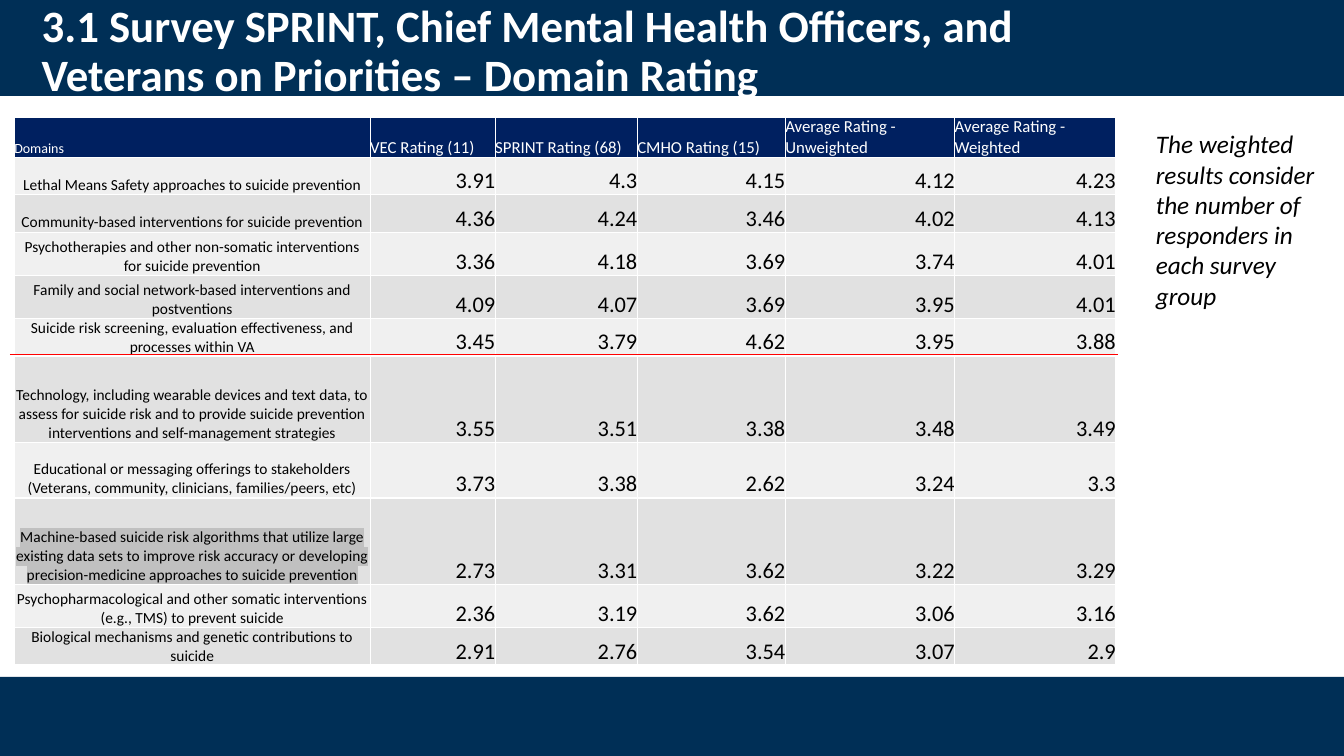
from dataclasses import dataclass

from lxml import etree
from pptx import Presentation, util as u
from pptx.dml import color as col
from pptx.enum import shapes, text
from pptx.oxml import ns


@dataclass(frozen=True)
class Theme:
    """Colours, type sizes and font of the slide."""
    font: str = "Calibri"
    band: str = "002F56"
    head: str = "002060"
    odd: str = "F0F0F0"
    even: str = "E1E1E1"
    mark: str = "C0C0C0"
    rule: str = "FF0000"
    white: str = "FFFFFF"
    black: str = "000000"
    title: int = 32
    note: int = 18
    value: int = 16
    label: int = 12
    domain: int = 11
    small: int = 10


T = Theme()
ALIGN = text.PP_ALIGN
TITLE = ("3.1 Survey SPRINT, Chief Mental Health Officers, and "
         "Veterans on Priorities – Domain Rating")
NOTE = "The weighted results consider the number of responders in each survey group"
HEADS = ["Domains", "VEC Rating (11)", "SPRINT Rating (68)", "CMHO Rating (15)",
         "Average Rating - Unweighted", "Average Rating - Weighted"]
WIDTHS = [8.97, 3.15, 3.58, 3.73, 4.27, 4.06]
HEIGHTS = [1.02, 0.94, 0.94, 1.09, 1.09, 0.94, 2.18, 1.4, 2.18, 1.09, 0.94]
MARKED = 8
ROWS = [
    ("Lethal Means Safety approaches to suicide prevention",
     "3.91", "4.3", "4.15", "4.12", "4.23"),
    ("Community-based interventions for suicide prevention",
     "4.36", "4.24", "3.46", "4.02", "4.13"),
    ("Psychotherapies and other non-somatic interventions for suicide prevention",
     "3.36", "4.18", "3.69", "3.74", "4.01"),
    ("Family and social network-based interventions and postventions",
     "4.09", "4.07", "3.69", "3.95", "4.01"),
    ("Suicide risk screening, evaluation effectiveness, and processes within VA",
     "3.45", "3.79", "4.62", "3.95", "3.88"),
    ("Technology, including wearable devices and text data, to assess for suicide risk "
     "and to provide suicide prevention interventions and self-management strategies",
     "3.55", "3.51", "3.38", "3.48", "3.49"),
    ("Educational or messaging offerings to stakeholders "
     "(Veterans, community, clinicians, families/peers, etc)",
     "3.73", "3.38", "2.62", "3.24", "3.3"),
    ("Machine-based suicide risk algorithms that utilize large existing data sets to improve "
     "risk accuracy or developing precision-medicine approaches to suicide prevention",
     "2.73", "3.31", "3.62", "3.22", "3.29"),
    ("Psychopharmacological and other somatic interventions (e.g., TMS) to prevent suicide",
     "2.36", "3.19", "3.62", "3.06", "3.16"),
    ("Biological mechanisms and genetic contributions to suicide",
     "2.91", "2.76", "3.54", "3.07", "2.9"),
]


def rgb(code):
    """Turn a hex code into a colour."""
    return col.RGBColor.from_string(code)


def write(frame, words, size, ink=T.black, bold=False, italic=False,
          align=ALIGN.LEFT, space=None, mark=None):
    """Write one formatted paragraph into a text frame."""
    para = frame.paragraphs[0]
    para.alignment = align
    para.line_spacing = space
    run = para.add_run()
    run.text = words
    font = run.font
    font.size, font.bold, font.italic = u.Pt(size), bold, italic
    font.color.rgb = rgb(ink)
    font.name = T.font
    if mark:
        light = etree.Element(ns.qn("a:highlight"))
        etree.SubElement(light, ns.qn("a:srgbClr"), val=mark)
        run._r.rPr.find(ns.qn("a:solidFill")).addnext(light)


def add_band(slide, top, height):
    """Draw a full-width dark band."""
    band = slide.shapes.add_shape(shapes.MSO_SHAPE.RECTANGLE, 0, u.Cm(top),
                                  u.Cm(33.87), u.Cm(height))
    band.shadow.inherit = False
    band.fill.solid()
    band.fill.fore_color.rgb = rgb(T.band)
    band.line.fill.background()


def add_text(slide, words, place, size, anchor=text.MSO_ANCHOR.TOP, **form):
    """Add a wrapped text box."""
    frame = slide.shapes.add_textbox(*map(u.Cm, place)).text_frame
    frame.word_wrap = True
    frame.vertical_anchor = anchor
    write(frame, words, size, **form)


def fill_cell(cell, words, fill, size, **form):
    """Fill a cell with colour, text and thin white borders."""
    cell.margin_left = cell.margin_right = cell.margin_top = cell.margin_bottom = 0
    cell.vertical_anchor = text.MSO_ANCHOR.BOTTOM
    cell.fill.solid()
    cell.fill.fore_color.rgb = rgb(fill)
    write(cell.text_frame, words, size, **form)
    props = cell._tc.get_or_add_tcPr()
    for spot, side in enumerate(("lnL", "lnR", "lnT", "lnB")):
        edge = etree.Element(ns.qn(f"a:{side}"), w=str(u.Pt(1)))
        paint = etree.SubElement(edge, ns.qn("a:solidFill"))
        etree.SubElement(paint, ns.qn("a:srgbClr"), val=T.white)
        props.insert(spot, edge)


def add_grid(slide):
    """Add the table of domain ratings."""
    place = map(u.Cm, (0.36, 2.95, sum(WIDTHS), sum(HEIGHTS)))
    grid = slide.shapes.add_table(len(HEIGHTS), len(WIDTHS), *place).table
    for part, width in zip(grid.columns, WIDTHS):
        part.width = u.Cm(width)
    for part, height in zip(grid.rows, HEIGHTS):
        part.height = u.Cm(height)
    for c, words in enumerate(HEADS):
        fill_cell(grid.cell(0, c), words, T.head, T.label if c else T.small, ink=T.white)
    for r, (domain, *rates) in enumerate(ROWS, 1):
        fill = T.odd if r % 2 else T.even
        fill_cell(grid.cell(r, 0), domain, fill, T.domain, align=ALIGN.CENTER,
                  mark=T.mark if r == MARKED else None)
        for c, rate in enumerate(rates, 1):
            fill_cell(grid.cell(r, c), rate, fill, T.value, align=ALIGN.RIGHT)


def add_rule(slide, left, right, top):
    """Draw the thin cut-off line across the table."""
    rule = slide.shapes.add_connector(shapes.MSO_CONNECTOR.STRAIGHT, u.Cm(left), u.Cm(top),
                                      u.Cm(right), u.Cm(top))
    rule.line.color.rgb = rgb(T.rule)
    rule.line.width = u.Pt(0.5)
    etree.SubElement(rule._element.spPr, ns.qn("a:effectLst"))


def main():
    """Build the slide and save it."""
    deck = Presentation()
    deck.slide_width, deck.slide_height = u.Cm(33.87), u.Cm(19.05)
    slide = deck.slides.add_slide(deck.slide_layouts[6])
    add_band(slide, 0, 2.42)
    add_band(slide, 17.06, 2.03)
    add_text(slide, TITLE, (0.8, 0.46, 29.2, 1.72), T.title, text.MSO_ANCHOR.MIDDLE,
             ink=T.white, bold=True, space=0.9)
    add_text(slide, NOTE, (28.88, 3.12, 4.72, 4.88), T.note, italic=True)
    add_grid(slide)
    add_rule(slide, 0.25, 28.17, 8.92)
    deck.save("out.pptx")


if __name__ == "__main__":
    main()
